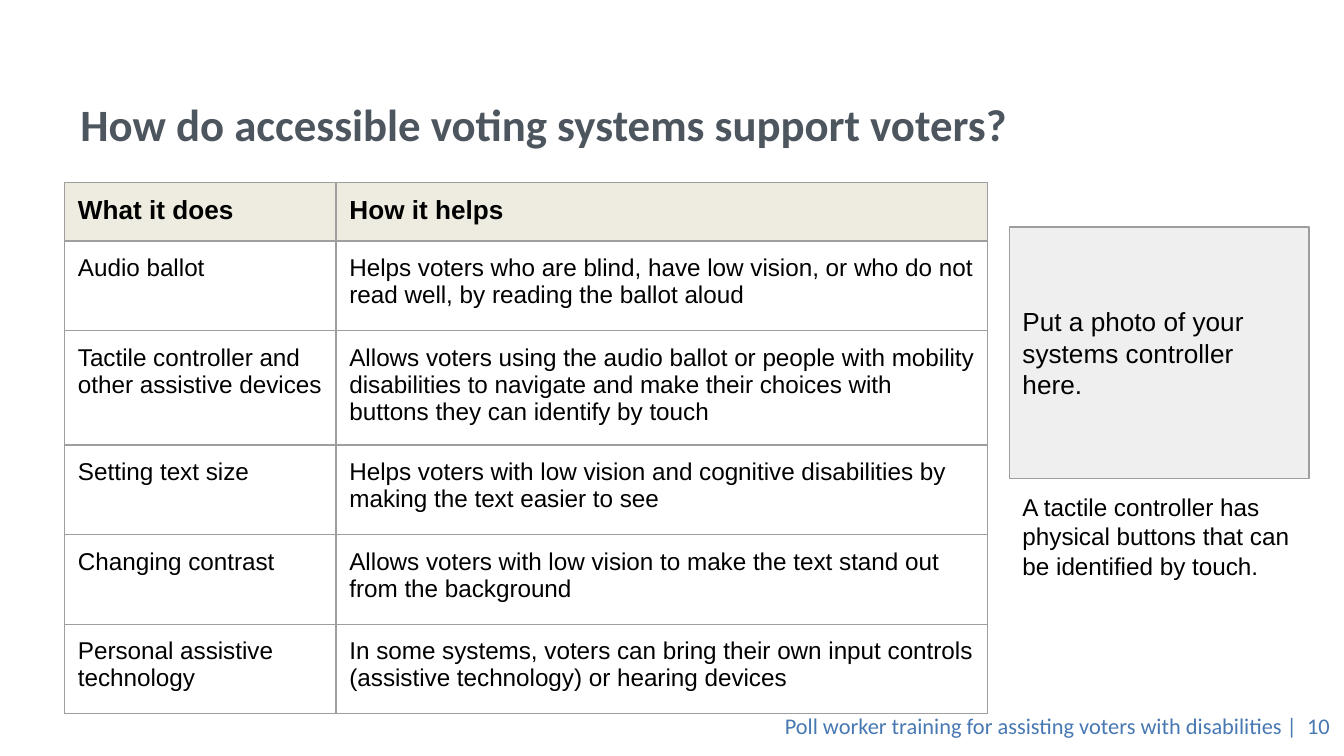
from lxml import etree
from pptx import Presentation
from pptx.dml.color import RGBColor
from pptx.enum import shapes, text
from pptx.oxml.ns import qn
from pptx.util import Inches, Pt

TITLE = "How do accessible voting systems support voters?"
FOOTER = "Poll worker training for assisting voters with disabilities |  10"
PHOTO = "Put a photo of your systems controller here."
CAPTION = "A tactile controller has physical buttons that can be identified by touch."
ROWS = [
    ("What it does", "How it helps"),
    ("Audio ballot",
     "Helps voters who are blind, have low vision, or who do not read well, "
     "by reading the ballot aloud"),
    ("Tactile controller and other assistive devices",
     "Allows voters using the audio ballot or people with mobility disabilities "
     "to navigate and make their choices with buttons they can identify by touch"),
    ("Setting text size",
     "Helps voters with low vision and cognitive disabilities by making the text "
     "easier to see"),
    ("Changing contrast",
     "Allows voters with low vision to make the text stand out from the background"),
    ("Personal assistive technology",
     "In some systems, voters can bring their own input controls "
     "(assistive technology) or hearing devices"),
]
WIDTHS = [2.02, 4.85]
TWO = 2 / 3  # height of a row with two lines
HEIGHTS = [0.43, TWO, 0.85, TWO, TWO, TWO]
SIDE, TOP, WIDE, TALL = 7.51, 1.69, 2.23, 1.87

BLACK = RGBColor(0, 0, 0)
SLATE = RGBColor(0x4D, 0x56, 0x5E)
BLUE = RGBColor(0x47, 0x78, 0xB2)
SAND = RGBColor(0xEE, 0xEB, 0xE0)
PALE = RGBColor(0xEF, 0xEF, 0xEF)
GREY = RGBColor(0x9E, 0x9E, 0x9E)

MIDDLE = text.MSO_ANCHOR.MIDDLE
LEFT = text.PP_ALIGN.LEFT


def write(frame, words, size, color=BLACK, font="Arial", bold=False, align=LEFT):
    frame.text = words
    frame.word_wrap = True
    line = frame.paragraphs[0]
    line.alignment = align
    face = line.runs[0].font
    face.name, face.size, face.bold = font, Pt(size), bold
    face.color.rgb = color


def pad(item, top):
    """Set the inner margins of a cell or text frame."""
    item.margin_left = item.margin_right = Inches(0.1)
    item.margin_top = item.margin_bottom = Inches(top)


def add_box(slide, box, words, size, anchor, top=0.1, **style):
    frame = slide.shapes.add_textbox(*map(Inches, box)).text_frame
    pad(frame, top)
    frame.vertical_anchor = anchor
    write(frame, words, size, **style)


def rule(cell):
    """Draw a thin grey line on all four sides of a cell."""
    props = cell._tc.get_or_add_tcPr()
    for at, side in enumerate(("lnL", "lnR", "lnT", "lnB")):
        line = etree.Element(qn("a:" + side), w=str(Pt(0.75)))
        fill = etree.SubElement(line, qn("a:solidFill"))
        etree.SubElement(fill, qn("a:srgbClr"), val=str(GREY))
        props.insert(at, line)


def add_grid(slide):
    size = map(Inches, (0.48, 1.36, sum(WIDTHS), sum(HEIGHTS)))
    table = slide.shapes.add_table(len(ROWS), len(WIDTHS), *size).table
    table.horz_banding = False
    for col, width in zip(table.columns, WIDTHS):
        col.width = Inches(width)
    for r, (row, height) in enumerate(zip(ROWS, HEIGHTS)):
        table.rows[r].height = Inches(height)
        head = r == 0
        for c, words in enumerate(row):
            cell = table.cell(r, c)
            pad(cell, 0.1)
            if head:
                cell.fill.solid()
                cell.fill.fore_color.rgb = SAND
            else:
                cell.fill.background()
            rule(cell)
            write(cell.text_frame, words, 14 if head else 13, bold=head)


def add_photo(slide):
    box = map(Inches, (SIDE, TOP, WIDE, TALL))
    shape = slide.shapes.add_shape(shapes.MSO_SHAPE.RECTANGLE, *box)
    shape.shadow.inherit = False
    shape.fill.solid()
    shape.fill.fore_color.rgb = PALE
    shape.line.color.rgb = GREY
    shape.line.width = Pt(0.75)
    frame = shape.text_frame
    pad(frame, 0.1)
    frame.vertical_anchor = MIDDLE
    write(frame, PHOTO, 14)


def main():
    deck = Presentation()
    deck.slide_width = Inches(10)
    deck.slide_height = deck.slide_width * 9 // 16
    slide = deck.slides.add_slide(deck.slide_layouts[6])
    add_box(slide, (4.88, 5.25, 5.12, 0.3), FOOTER, 12, text.MSO_ANCHOR.TOP, 0.05,
            color=BLUE, font="Calibri", align=text.PP_ALIGN.RIGHT)
    add_box(slide, (0.5, 0.23, 9, 0.94), TITLE, 24, text.MSO_ANCHOR.BOTTOM, 0.05,
            color=SLATE, font="Calibri", bold=True)
    add_grid(slide)
    add_photo(slide)
    add_box(slide, (SIDE, TOP + TALL, WIDE, 0.86), CAPTION, 13, MIDDLE)
    deck.save("out.pptx")


if __name__ == "__main__":
    main()
